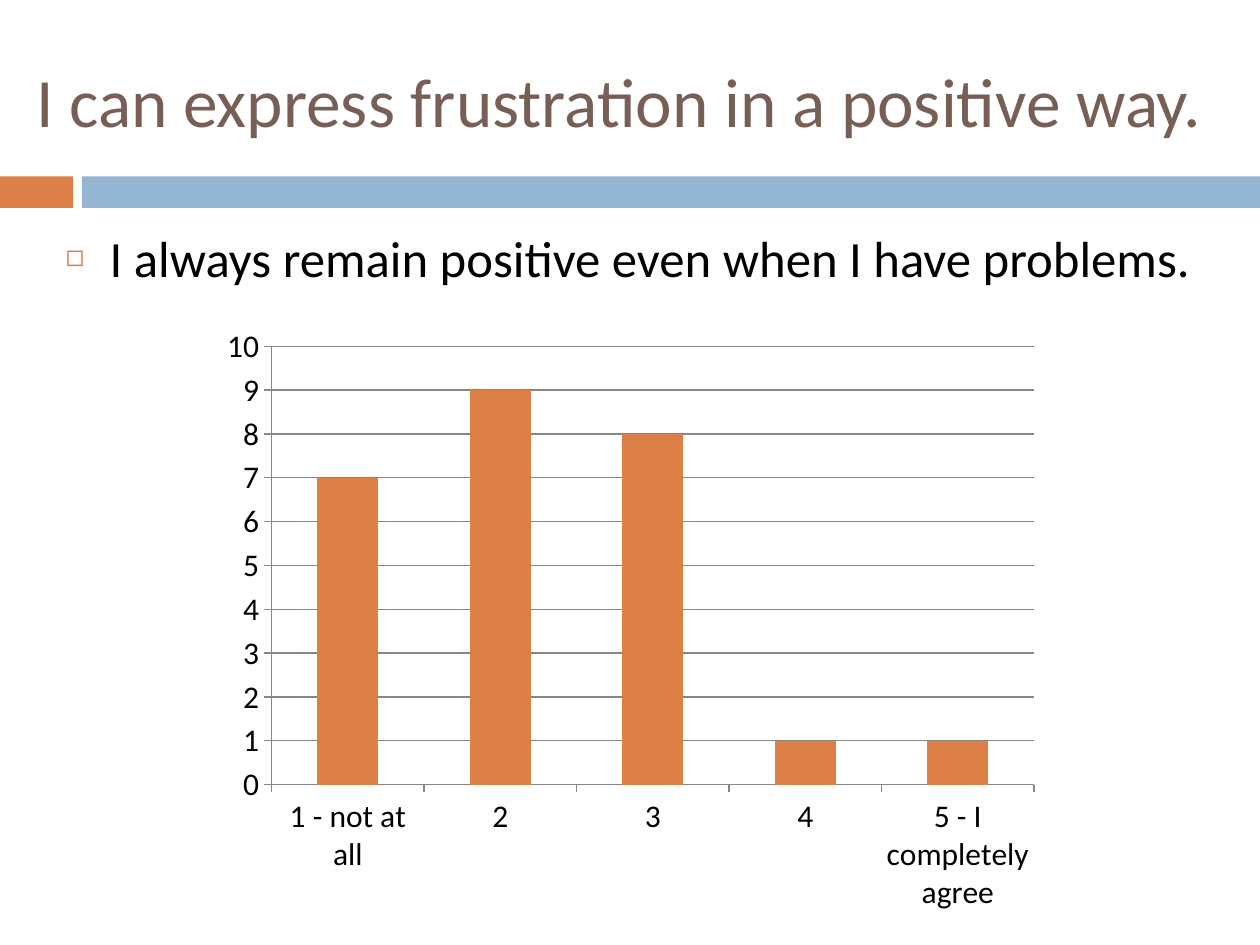
from lxml import etree
from pptx import Presentation
from pptx import util as u
from pptx.chart.data import CategoryChartData
from pptx.dml.color import RGBColor
from pptx.enum import chart as charts, shapes, text
from pptx.oxml.ns import qn

FONT = "Calibri"
ORANGE, BLUE, BROWN, BLACK, GRAY = "DD8047", "94B6D2", "775F55", "000000", "868686"
RATINGS = {"1 - not at all": 7, "2": 9, "3": 8, "4": 1, "5 - I completely agree": 1}


def color(value):
    return RGBColor.from_string(value)


def apply(target, **values):
    for name, value in values.items():
        setattr(target, name, value)


def place(shape, left, top, width, height):
    apply(shape, left=u.Inches(left), top=u.Inches(top),
          width=u.Inches(width), height=u.Inches(height))


def style_font(font, size, value):
    apply(font, name=FONT, size=u.Pt(size))
    font.color.rgb = color(value)


def add_bar(page, left, width, value):
    bar = page.shapes.add_shape(shapes.MSO_SHAPE.RECTANGLE, u.Inches(left),
                                u.Inches(1.4), u.Inches(width), u.Inches(0.25))
    bar.shadow.inherit = False
    bar.fill.solid()
    bar.fill.fore_color.rgb = color(value)
    bar.line.fill.background()


def fill_placeholder(box, words, bounds, size, value, anchor, align):
    place(box, *bounds)
    frame = box.text_frame
    apply(frame, text=words, word_wrap=True, vertical_anchor=anchor,
          auto_size=text.MSO_AUTO_SIZE.NONE)
    para = frame.paragraphs[0]
    para.alignment = align
    style_font(para.runs[0].font, size, value)
    return para


def add_bullet(para, symbol, value, percent, indent):
    para.space_before = u.Pt(7)
    props = para._p.get_or_add_pPr()
    props.set("marL", str(u.Inches(indent)))
    props.set("indent", str(-u.Inches(indent)))
    tint = etree.SubElement(props, qn("a:buClr"))
    etree.SubElement(tint, qn("a:srgbClr"), val=value)
    etree.SubElement(props, qn("a:buSzPct"), val=str(percent * 1000))
    etree.SubElement(props, qn("a:buChar"), char=symbol)


def add_rating_chart(page):
    data = CategoryChartData()
    data.categories = list(RATINGS)
    data.add_series("Series 1", list(RATINGS.values()))
    chart = page.shapes.add_chart(
        charts.XL_CHART_TYPE.COLUMN_CLUSTERED, u.Inches(1.67), u.Inches(2.5),
        u.Inches(6.67), u.Inches(4.83), data).chart
    apply(chart, has_legend=False, has_title=False)
    style_font(chart.font, 18, BLACK)

    # Columns
    plot = chart.plots[0]
    apply(plot, gap_width=150, vary_by_categories=False)
    fill = plot.series[0].format.fill
    fill.solid()
    fill.fore_color.rgb = color(ORANGE)

    # Axes and gridlines
    values = chart.value_axis
    apply(values, minimum_scale=0, maximum_scale=10, major_unit=1,
          has_major_gridlines=True)
    for axis in (chart.category_axis, values):
        axis.major_tick_mark = charts.XL_TICK_MARK.OUTSIDE
    for part in (chart.category_axis, values, values.major_gridlines):
        part.format.line.color.rgb = color(GRAY)
        part.format.line.width = u.Pt(0.75)


def main():
    deck = Presentation()
    apply(deck, slide_width=u.Inches(10), slide_height=u.Inches(7.5))
    page = deck.slides.add_slide(deck.slide_layouts[1])

    # Divider band
    add_bar(page, 0, 0.58, ORANGE)
    add_bar(page, 0.65, 9.35, BLUE)

    # Title and statement
    fill_placeholder(page.shapes.title, "I can express frustration in a positive way.",
                     (-0.17, 0.25, 10.17, 1.08), 39.6, BROWN,
                     text.MSO_ANCHOR.MIDDLE, text.PP_ALIGN.CENTER)
    statement = fill_placeholder(
        page.placeholders[1], "I always remain positive even when I have problems.",
        (0.42, 1.75, 9.17, 4.92), 29, BLACK,
        text.MSO_ANCHOR.TOP, text.PP_ALIGN.LEFT)
    add_bullet(statement, "◻", ORANGE, 60, 0.35)

    # Survey answers
    add_rating_chart(page)
    deck.save("out.pptx")


if __name__ == "__main__":
    main()
